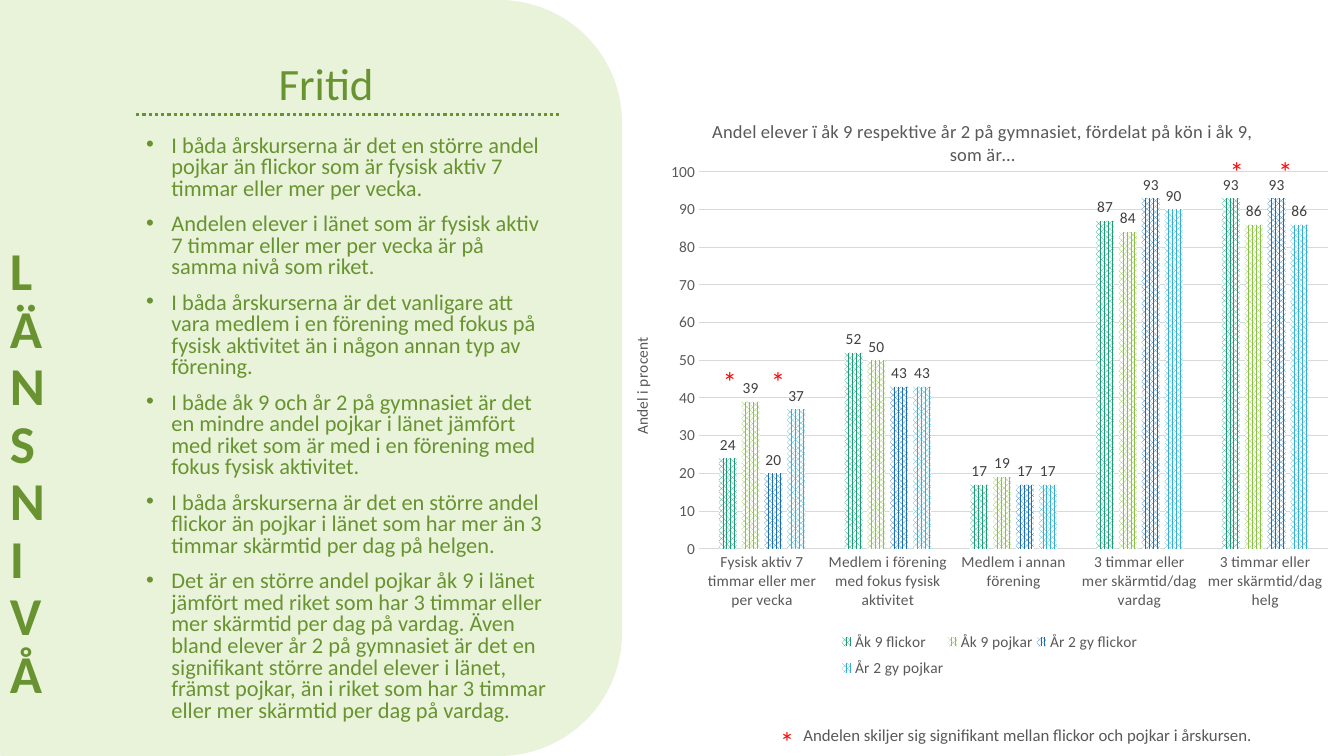
from lxml import etree
from pptx import Presentation
from pptx.chart.data import CategoryChartData
from pptx.dml.color import RGBColor
from pptx.enum.chart import XL_CHART_TYPE, XL_LABEL_POSITION, XL_LEGEND_POSITION, XL_TICK_MARK
from pptx.enum.dml import MSO_LINE, MSO_PATTERN
from pptx.enum.shapes import MSO_CONNECTOR, MSO_SHAPE
from pptx.enum.text import MSO_ANCHOR, PP_ALIGN
from pptx.oxml.ns import qn
from pptx.util import Inches, Pt

GREEN = RGBColor(0x69, 0x93, 0x31)
PALE_GREEN = RGBColor(0xE8, 0xF3, 0xDA)
GRAY = RGBColor(0x59, 0x59, 0x59)
DARK_GRAY = RGBColor(0x40, 0x40, 0x40)
LIGHT_GRAY = RGBColor(0xD9, 0xD9, 0xD9)
RED = RGBColor(0xFF, 0x00, 0x00)
WHITE = RGBColor(0xFF, 0xFF, 0xFF)

BULLETS = [
    "I båda årskurserna är det en större andel pojkar än flickor som är fysisk aktiv 7 timmar eller mer per vecka.",
    "Andelen elever i länet som är fysisk aktiv 7 timmar eller mer per vecka är på samma nivå som riket.",
    "I båda årskurserna är det vanligare att vara medlem i en förening med fokus på fysisk aktivitet än i någon "
    "annan typ av förening.",
    "I både åk 9 och år 2 på gymnasiet är det en mindre andel pojkar i länet jämfört med riket som är med i en "
    "förening med fokus fysisk aktivitet.",
    "I båda årskurserna är det en större andel flickor än pojkar i länet som har mer än 3 timmar skärmtid per dag "
    "på helgen.",
    "Det är en större andel pojkar åk 9 i länet jämfört med riket som har 3 timmar eller mer skärmtid per dag på "
    "vardag. Även bland elever år 2 på gymnasiet är det en signifikant större andel elever i länet, främst pojkar, "
    "än i riket som har 3 timmar eller mer skärmtid per dag på vardag.",
]
CATEGORIES = [
    "Fysisk aktiv 7 timmar eller mer per vecka",
    "Medlem i förening med fokus fysisk aktivitet",
    "Medlem i annan förening",
    "3 timmar eller mer skärmtid/dag vardag",
    "3 timmar eller mer skärmtid/dag helg",
]
SERIES = [
    ("Åk 9 flickor", (24, 52, 17, 87, 93), RGBColor(0x1D, 0x9A, 0x78)),
    ("Åk 9 pojkar", (39, 50, 19, 84, 86), RGBColor(0x8B, 0xC1, 0x45)),
    ("År 2 gy flickor", (20, 43, 17, 93, 93), RGBColor(0x1D, 0x6F, 0xA9)),
    ("År 2 gy pojkar", (37, 43, 17, 90, 86), RGBColor(0x36, 0xAF, 0xCE)),
]
STARS = [(7.64, 7.14), (7.07, 3.57), (7.55, 3.57), (12.58, 1.48), (12.1, 1.48)]


def style(font, size, color, bold=False):
    font.name = "Calibri"
    font.size = Pt(size)
    font.bold = bold
    font.color.rgb = color


def set_layout(parent, index, **values):
    """Give a chart part a manual layout, as its child number index."""
    for old in parent.findall(qn("c:layout")):
        parent.remove(old)
    layout = etree.Element(qn("c:layout"))
    manual = etree.SubElement(layout, qn("c:manualLayout"))
    for tag, value in values.items():
        etree.SubElement(manual, qn(f"c:{tag}")).set("val", str(value))
    parent.insert(index, layout)


prs = Presentation()
prs.slide_width, prs.slide_height = Inches(13.33), Inches(7.5)
s = prs.slides.add_slide(prs.slide_layouts[1])
title, body = s.placeholders

# Green panel with the vertical heading
panel = s.shapes.add_shape(MSO_SHAPE.ROUNDED_RECTANGLE, Inches(-1.14), 0, Inches(7.31), Inches(7.5))
panel.fill.solid()
panel.fill.fore_color.rgb = PALE_GREEN
panel.line.fill.background()
panel.shadow.inherit = False
s.shapes[0].element.addprevious(panel.element)

level = s.shapes.add_textbox(0, Inches(0.47), Inches(1.05), Inches(6.57))
tf = level.text_frame
tf.word_wrap = True
tf.vertical_anchor = MSO_ANCHOR.BOTTOM
tf.text = "LÄNSNIVÅ"
tf.paragraphs[0].line_spacing = 0.9
style(tf.paragraphs[0].runs[0].font, 38, GREEN, bold=True)
tf._txBody.bodyPr.set("vert", "wordArtVert")

# Title, dotted rule and bullets
title.left, title.top, title.width, title.height = Inches(1.36), Inches(0.16), Inches(3.75), Inches(0.98)
tf = title.text_frame
tf.vertical_anchor = MSO_ANCHOR.BOTTOM
tf.text = "Fritid"
p = tf.paragraphs[0]
p.alignment = PP_ALIGN.CENTER
p.line_spacing = 0.9
style(p.runs[0].font, 32, GREEN)

rule = s.shapes.add_connector(MSO_CONNECTOR.STRAIGHT, Inches(1.35), Inches(1.14), Inches(5.56), Inches(1.14))
rule.line.color.rgb = GREEN
rule.line.width = Pt(2.25)
rule.line.dash_style = MSO_LINE.ROUND_DOT
etree.SubElement(rule.element.spPr, qn("a:effectLst"))

body.left, body.top, body.width, body.height = Inches(1.35), Inches(1.3), Inches(4.21), Inches(6.2)
tf = body.text_frame
tf.text = "\n".join(BULLETS)
for p in tf.paragraphs:
    p.line_spacing = 0.8
    p.space_before = Pt(10)
    style(p.runs[0].font, 16, GREEN)
    pPr = p._p.get_or_add_pPr()
    pPr.set("marL", str(Inches(0.25)))
    pPr.set("indent", str(-Inches(0.25)))
    etree.SubElement(pPr, qn("a:buChar")).set("char", "•")

# Chart
data = CategoryChartData(number_format="0")
data.categories = CATEGORIES
for name, values, _ in SERIES:
    data.add_series(name, values)
chart = s.shapes.add_chart(XL_CHART_TYPE.COLUMN_CLUSTERED, Inches(6.16), Inches(0.97),
                           Inches(7.17), Inches(5.88), data).chart
style(chart.font, 11, GRAY)
tf = chart.chart_title.text_frame
tf.text = "Andel elever ï åk 9 respektive år 2 på gymnasiet, fördelat på kön i åk 9, som är…"
style(tf.paragraphs[0].runs[0].font, 13.2, GRAY)

plot = chart.plots[0]
plot.vary_by_categories = False
plot.gap_width = 219
plot.overlap = -27
for series, (_, _, color) in zip(plot.series, SERIES):
    fill = series.format.fill
    fill.patterned()
    fill.pattern = MSO_PATTERN.PERCENT_75
    fill.fore_color.rgb = color
    fill.back_color.rgb = WHITE
    labels = series.data_labels
    labels.show_value = True
    labels.position = XL_LABEL_POSITION.OUTSIDE_END
    labels.number_format = "0"
    labels.number_format_is_linked = False
    style(labels.font, 11, DARK_GRAY)

for axis in (chart.category_axis, chart.value_axis):
    axis.major_tick_mark = axis.minor_tick_mark = XL_TICK_MARK.NONE
    style(axis.tick_labels.font, 11, GRAY)
line = chart.category_axis.format.line
line.color.rgb = LIGHT_GRAY
line.width = Pt(0.75)
axis = chart.value_axis
axis.minimum_scale, axis.maximum_scale, axis.major_unit = 0, 100, 10
axis.format.line.fill.background()
axis.major_gridlines.format.line.color.rgb = LIGHT_GRAY
axis.major_gridlines.format.line.width = Pt(0.75)
tf = axis.axis_title.text_frame
tf.text = "Andel i procent"
style(tf.paragraphs[0].runs[0].font, 11, GRAY)

chart.has_legend = True
legend = chart.legend
legend.position = XL_LEGEND_POSITION.BOTTOM
legend.include_in_layout = False
style(legend.font, 11, GRAY)

plot_area = chart.element.find(".//" + qn("c:plotArea"))
set_layout(plot_area, 0, layoutTarget="inner", xMode="edge", yMode="edge", x=0.108, y=0.125, w=0.87, h=0.636)
set_layout(plot_area.getparent().find(qn("c:legend")), 1, xMode="edge", yMode="edge", x=0.3, y=0.89, w=0.42, h=0.1)

# Significance stars and their key
notes = [(x, y, 0.48, 0.69, "*", 20, RED) for x, y in STARS]
notes.append((7.87, 7.14, 4.71, 0.3, "Andelen skiljer sig signifikant mellan flickor och pojkar i årskursen.", 12, GRAY))
for x, y, w, h, text, size, color in notes:
    tf = s.shapes.add_textbox(Inches(x), Inches(y), Inches(w), Inches(h)).text_frame
    tf.word_wrap = True
    tf.text = text
    style(tf.paragraphs[0].runs[0].font, size, color)

prs.save("out.pptx")
